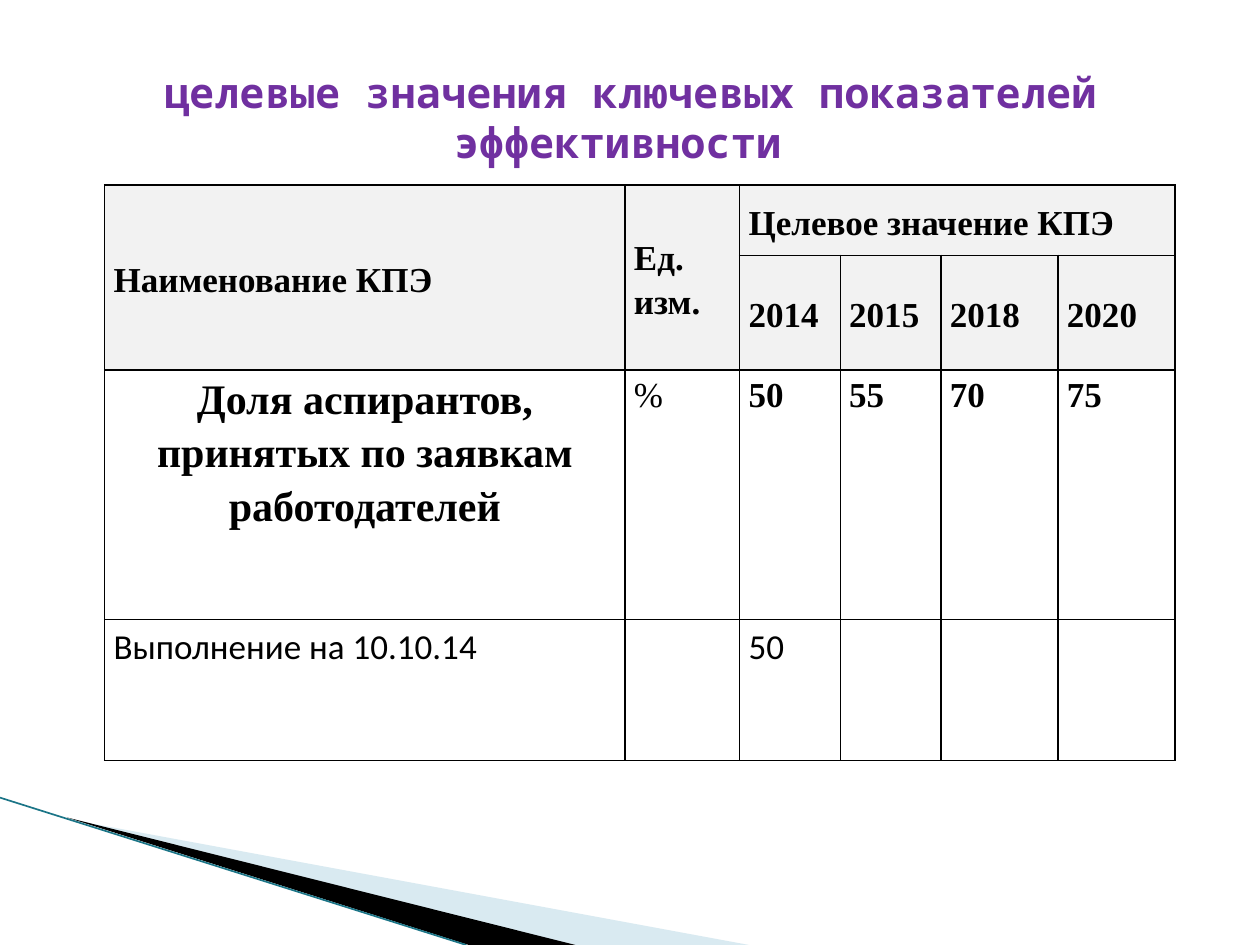
from lxml import etree
from pptx import Presentation
from pptx.dml.color import RGBColor
from pptx.enum import shapes, text
from pptx.oxml import ns
from pptx.util import Cm, Pt

TITLE = "целевые значения ключевых показателей эффективности "
ROWS = [
    ["Наименование КПЭ", "Ед. изм.", "Целевое значение КПЭ", "", "", ""],
    ["", "", "2014", "2015", "2018", "2020"],
    ["Доля аспирантов, принятых по заявкам работодателей", "%", "50", "55", "70", "75"],
    ["Выполнение на 10.10.14", "", "50", "", "", ""],
]
MERGES = [((0, 0), (1, 0)), ((0, 1), (1, 1)), ((0, 2), (0, 5))]
COLUMN_WIDTHS = [10.49, 2.31, 2.03, 2.03, 2.36, 2.36]
ROW_HEIGHTS = [1.42, 2.31, 5.03, 2.84]
HEADER_ROWS = 2
COLORS = {"title": "7030A0", "ink": "000000", "header": "F2F2F2",
          "pale": "A0CBDC", "edge": "1B7587"}
WEDGES = [
    ("pale", 40, [(1.4, 16.52), (15.1, 19.05), (11.58, 19.05)]),
    ("ink", 100, [(1.35, 16.48), (11.6, 19.05), (9.45, 19.05)]),
]
EDGE = [(0, 16.08), (9.4, 19.05)]


def rgb(name):
    """Return a palette colour."""
    return RGBColor.from_string(COLORS[name])


def write(frame, content, font="Times New Roman", size=20, bold=True, color="ink",
          align=text.PP_ALIGN.LEFT, spacing=1.15, after=0):
    """Write one formatted paragraph."""
    paragraph = frame.paragraphs[0]
    paragraph.alignment = align
    paragraph.line_spacing = spacing
    paragraph.space_before, paragraph.space_after = Pt(0), Pt(after)
    run = paragraph.add_run()
    run.text = content
    run.font.name, run.font.size, run.font.bold = font, Pt(size), bold
    run.font.color.rgb = rgb(color)


def add_wedge(slide, color, opacity, points):
    """Draw one triangular wedge of the corner ornament."""
    corners = [(Cm(x), Cm(y)) for x, y in points]
    builder = slide.shapes.build_freeform(*corners[0])
    builder.add_line_segments(corners[1:], close=True)
    wedge = builder.convert_to_shape()
    wedge.shadow.inherit = False
    wedge.line.fill.background()
    wedge.fill.solid()
    wedge.fill.fore_color.rgb = rgb(color)
    if opacity < 100:
        tint = wedge.fill._xPr.find(".//" + ns.qn("a:srgbClr"))
        etree.SubElement(tint, ns.qn("a:alpha"), val=str(opacity * 1000))


def add_edge(slide):
    """Draw the thin line along the corner ornament."""
    (x1, y1), (x2, y2) = EDGE
    edge = slide.shapes.add_connector(shapes.MSO_CONNECTOR.STRAIGHT,
                                      Cm(x1), Cm(y1), Cm(x2), Cm(y2))
    edge.line.color.rgb = rgb("edge")
    edge.line.width = Pt(0.95)
    etree.SubElement(edge._element.spPr, ns.qn("a:effectLst"))


def add_borders(cell):
    """Give a cell a thin border on each side."""
    properties = cell._tc.get_or_add_tcPr()
    for side in ("lnL", "lnR", "lnT", "lnB"):
        border = etree.SubElement(properties, ns.qn("a:" + side), w=str(Pt(1)))
        fill = etree.SubElement(border, ns.qn("a:solidFill"))
        etree.SubElement(fill, ns.qn("a:srgbClr"), val=COLORS["ink"])


def cell_format(row, column):
    """Return the text format for a table position."""
    if row == 3:
        return {"font": "Calibri", "bold": False, "after": 6}
    if row == 2 and column == 0:
        return {"size": 24, "align": text.PP_ALIGN.CENTER}
    return {"bold": (row, column) != (2, 1)}


def add_targets(slide):
    """Build the table of target values."""
    targets = slide.shapes.add_table(
        len(ROWS), len(COLUMN_WIDTHS), Cm(2.11), Cm(3.73),
        Cm(sum(COLUMN_WIDTHS)), Cm(sum(ROW_HEIGHTS))).table
    targets.first_row = targets.horz_banding = False
    for column, width in zip(targets.columns, COLUMN_WIDTHS):
        column.width = Cm(width)
    for row, height in zip(targets.rows, ROW_HEIGHTS):
        row.height = Cm(height)
    for r, values in enumerate(ROWS):
        for c, value in enumerate(values):
            cell = targets.cell(r, c)
            add_borders(cell)
            cell.margin_left = cell.margin_right = Cm(0.18)
            cell.margin_top = cell.margin_bottom = 0
            if r < HEADER_ROWS:
                cell.vertical_anchor = text.MSO_ANCHOR.MIDDLE
                cell.fill.solid()
                cell.fill.fore_color.rgb = rgb("header")
            else:
                cell.fill.background()
            if value:
                write(cell.text_frame, value, **cell_format(r, c))
    for first, last in MERGES:
        targets.cell(*first).merge(targets.cell(*last))


def main():
    """Build and save the slide."""
    deck = Presentation()
    deck.slide_width, deck.slide_height = Cm(25.4), Cm(19.05)
    slide = deck.slides.add_slide(deck.slide_layouts[5])
    for wedge in WEDGES:
        add_wedge(slide, *wedge)
    add_edge(slide)
    add_targets(slide)
    title = slide.shapes.title
    title.left, title.top, title.width, title.height = Cm(1.27), Cm(0.76), Cm(22.86), Cm(3.18)
    title.text_frame.vertical_anchor = text.MSO_ANCHOR.MIDDLE
    write(title.text_frame, TITLE, font="Noto Sans Mono", size=24, color="title",
          align=text.PP_ALIGN.CENTER, spacing=1.0)
    deck.save("out.pptx")


if __name__ == "__main__":
    main()
